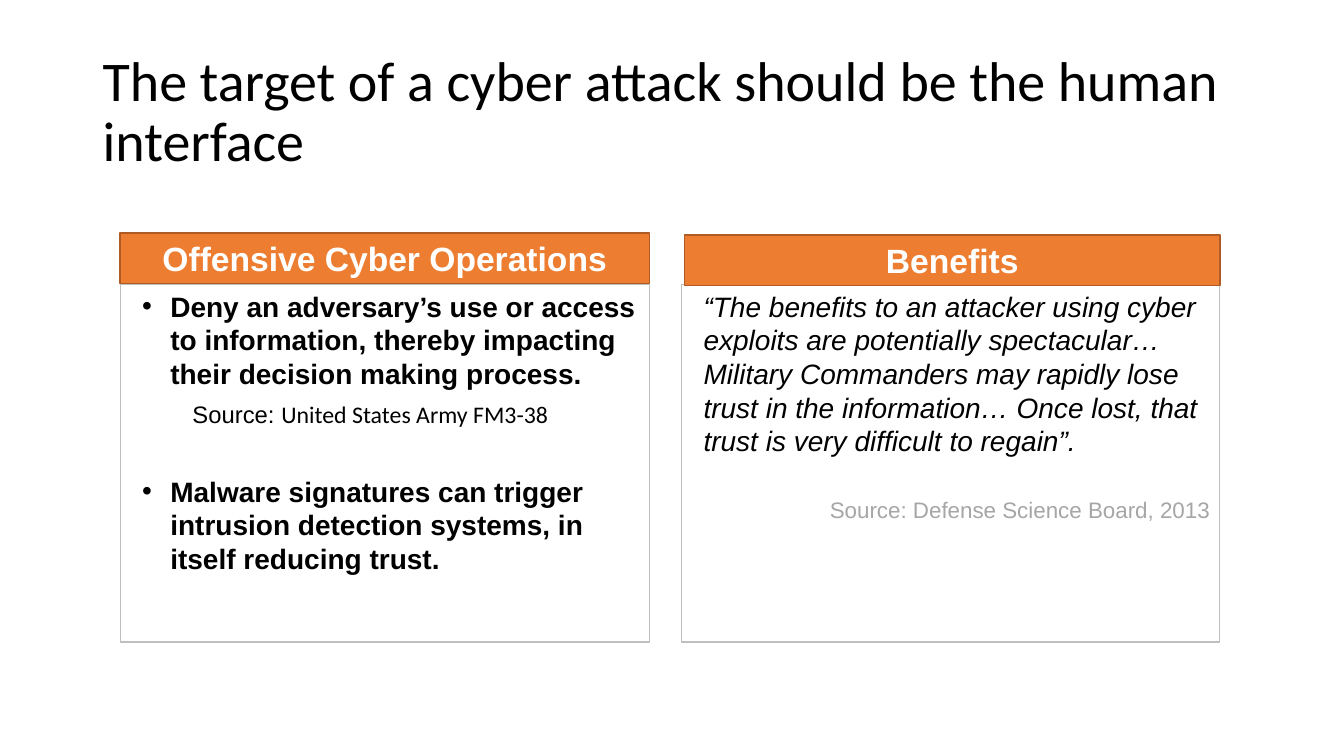
from lxml import etree
from pptx import Presentation
from pptx.dml.color import RGBColor
from pptx.enum.shapes import MSO_SHAPE
from pptx.enum.text import MSO_ANCHOR, PP_ALIGN
from pptx.oxml.ns import qn
from pptx.util import Inches, Pt

WIDTH, HEIGHT = Inches(13.33), Inches(7.5)
HEADER_HEIGHT = 6.67
BODY_OFFSET = 6.8
BODY_SIZE = 20
EMPTY_LINE = 24
SPACE = 0.2 * BODY_SIZE


def color(hex_code):
    return RGBColor.from_string(hex_code)


def place(left, top, width, height):
    """Turn percentages of the slide's size into lengths."""
    return (int(WIDTH * left / 100), int(HEIGHT * top / 100),
            int(WIDTH * width / 100), int(HEIGHT * height / 100))


def set_font(font, size, hex_code="000000", name="Arial", bold=False, italic=False):
    font.size, font.name = Pt(size), name
    font.bold, font.italic = bold, italic
    font.color.rgb = color(hex_code)


def set_indent(paragraph, margin, first_line=0, bullet=None):
    properties = paragraph._p.get_or_add_pPr()
    properties.set("marL", str(Inches(margin)))
    properties.set("indent", str(Inches(first_line)))
    if bullet:
        etree.SubElement(properties, qn("a:buFont")).set("typeface", "Arial")
        etree.SubElement(properties, qn("a:buChar")).set("char", bullet)


def add_title(slide, box, text):
    frame = slide.shapes.add_textbox(*place(*box)).text_frame
    frame.word_wrap = True
    frame.vertical_anchor = MSO_ANCHOR.MIDDLE
    paragraph = frame.paragraphs[0]
    paragraph.text = text
    paragraph.line_spacing = 0.9
    set_font(paragraph.font, 40, name="Calibri")


def add_rectangle(slide, box, line, line_width, fill=None):
    shape = slide.shapes.add_shape(MSO_SHAPE.RECTANGLE, *place(*box))
    shape.shadow.inherit = False
    if fill:
        shape.fill.solid()
        shape.fill.fore_color.rgb = color(fill)
    else:
        shape.fill.background()
    shape.line.color.rgb = color(line)
    shape.line.width = Pt(line_width)
    shape.text_frame.word_wrap = True
    shape.text_frame.vertical_anchor = MSO_ANCHOR.TOP
    shape.text_frame.paragraphs[0].alignment = PP_ALIGN.LEFT
    return shape.text_frame


def add_panel(slide, box, heading, inset=0, drop=0):
    """Draw a body with a header on top of it and return the body's text frame."""
    left, top, width, height = box
    body = add_rectangle(
        slide, (left, top + BODY_OFFSET, width, height - BODY_OFFSET), "BFBFBF", 0.75)
    header = add_rectangle(
        slide, (left + inset, top + drop, width - inset, HEADER_HEIGHT),
        "AF5C24", 1, "ED7D31")
    paragraph = header.paragraphs[0]
    paragraph.text = heading
    paragraph.alignment = PP_ALIGN.CENTER
    paragraph.space_before = Pt(4.8)
    set_font(paragraph.font, 24, "FFFFFF", bold=True)
    return body


def add_bullet(paragraph, text, space_before):
    paragraph.text = text
    paragraph.alignment = PP_ALIGN.LEFT
    paragraph.space_before = Pt(space_before)
    set_indent(paragraph, 0.4, -0.28, "•")
    set_font(paragraph.font, BODY_SIZE, bold=True)


def add_operations(slide, box):
    body = add_panel(slide, box, "Offensive Cyber Operations")
    add_bullet(body.paragraphs[0],
               "Deny an adversary’s use or access to information, "
               "thereby impacting their decision making process.", SPACE)

    source = body.add_paragraph()
    source.alignment = PP_ALIGN.LEFT
    source.space_before = Pt(SPACE)
    set_indent(source, 0.12)
    for text, size, name in (("\t", BODY_SIZE, "Arial"),
                             ("Source: ", 17, "Arial"),
                             ("United States Army FM3-38", 17, "Calibri")):
        run = source.add_run()
        run.text = text
        set_font(run.font, size, name=name)

    add_bullet(body.add_paragraph(),
               "Malware signatures can trigger intrusion detection systems, "
               "in itself reducing trust.", 2 * SPACE + EMPTY_LINE)


def add_benefits(slide, box):
    body = add_panel(slide, box, "Benefits", inset=0.23, drop=0.27)
    quote = body.paragraphs[0]
    quote.text = ("“The benefits to an attacker using cyber exploits are potentially "
                  "spectacular… Military Commanders may rapidly lose trust in the "
                  "information… Once lost, that trust is very difficult to regain”.")
    quote.space_before = Pt(SPACE)
    set_indent(quote, 0.12)
    set_font(quote.font, BODY_SIZE, italic=True)

    source = body.add_paragraph()
    source.text = "Source: Defense Science Board, 2013"
    source.alignment = PP_ALIGN.RIGHT
    source.space_before = Pt(SPACE + EMPTY_LINE)
    set_font(source.font, 16, "A6A6A6")


def main():
    presentation = Presentation()
    presentation.slide_width, presentation.slide_height = WIDTH, HEIGHT
    slide = presentation.slides.add_slide(presentation.slide_layouts[6])
    add_title(slide, (6.9, 5.33, 86.27, 19.33),
              "The target of a cyber attack should be the human interface")
    add_operations(slide, (8.93, 30.8, 39.38, 54.13))
    add_benefits(slide, (50.71, 30.8, 40.06, 54.13))
    presentation.save("out.pptx")


if __name__ == "__main__":
    main()
